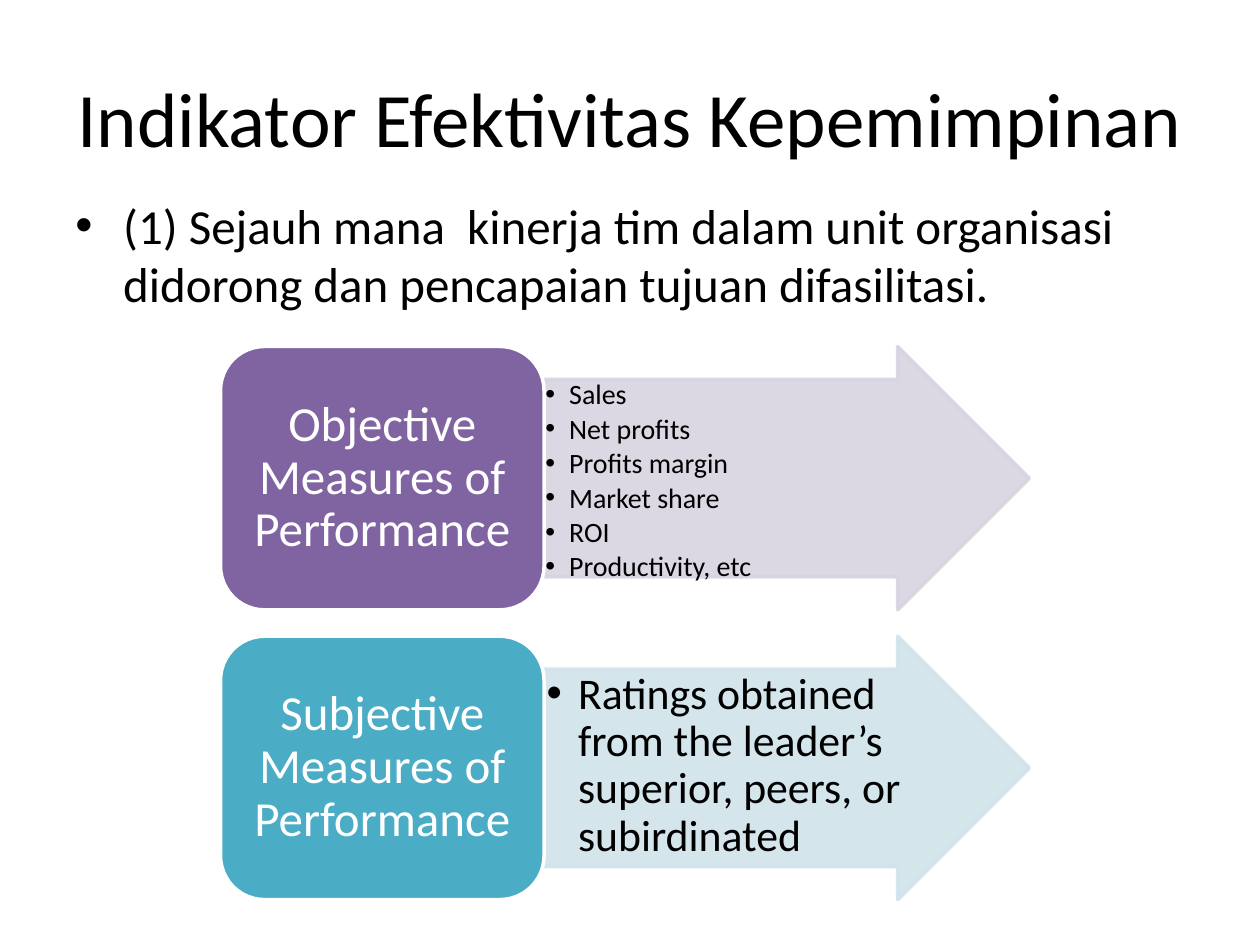
from lxml.etree import SubElement
from pptx import Presentation
from pptx.dml.color import RGBColor
from pptx.enum.shapes import MSO_SHAPE as SHAPE
from pptx.enum.text import MSO_ANCHOR as ANCHOR, PP_ALIGN as ALIGN
from pptx.oxml.ns import qn
from pptx.util import Inches, Pt

FONT = "Calibri"
BLACK, WHITE = "000000", "FFFFFF"
MEASURES = [
    ("Objective Measures of Performance", "8064A2", "D8D3E0",
     ["Sales", "Net profits", "Profits margin", "Market share", "ROI",
      "Productivity, etc"], 16, 0.19, 0.01),
    ("Subjective Measures of Performance", "4BACC6", "D0E3EA",
     ["Ratings obtained from the leader’s superior, peers, or subirdinated"],
     25, 0.25, 0.02),
]


def rgb(value):
    return RGBColor.from_string(value)


def set_alpha(sp, percent):
    """Make fill and line of a shape partly opaque."""
    for color in list(sp._element.spPr.iter(qn("a:srgbClr"))):
        SubElement(color, qn("a:alpha")).set("val", str(percent * 1000))


def add_bullet(p, indent):
    pPr = p._p.get_or_add_pPr()
    pPr.set("marL", str(Inches(indent)))
    pPr.set("indent", str(-Inches(indent)))
    SubElement(pPr, qn("a:buFont")).set("typeface", "Arial")
    SubElement(pPr, qn("a:buChar")).set("char", "•")


def write(sp, lines, size, color=BLACK, align=ALIGN.LEFT, anchor=ANCHOR.TOP,
          inset=(0.1, 0.05), indent=None, spacing=1.0, before=0, after=0):
    """Fill a shape with paragraphs; before and after are shares of the size."""
    tf = sp.text_frame
    tf.word_wrap = True
    tf.vertical_anchor = anchor
    tf.margin_left = tf.margin_right = Inches(inset[0])
    tf.margin_top = tf.margin_bottom = Inches(inset[1])
    for i, line in enumerate(lines):
        p = tf.add_paragraph() if i else tf.paragraphs[0]
        p.alignment = align
        p.line_spacing = spacing
        p.space_before = Pt(size * before)
        p.space_after = Pt(size * after)
        if indent:
            add_bullet(p, indent)
        r = p.add_run()
        r.text = line
        r.font.name = FONT
        r.font.size = Pt(size)
        r.font.color.rgb = rgb(color)


def add_box(s, kind, box, fill, line):
    sp = s.shapes.add_shape(kind, *map(Inches, box))
    sp.shadow.inherit = False
    sp.fill.solid()
    sp.fill.fore_color.rgb = rgb(fill)
    sp.line.color.rgb = rgb(line)
    sp.line.width = Pt(2)
    return sp


def add_heading(s, box, title):
    sp = s.shapes.add_textbox(*map(Inches, box))
    write(sp, [title], 44, align=ALIGN.CENTER, anchor=ANCHOR.MIDDLE)


def add_statement(s, box, text):
    sp = s.shapes.add_textbox(*map(Inches, box))
    write(sp, [text], 28, indent=0.38, before=0.2)


def add_measure(s, box, label, color, tint, items, size, indent, inset):
    """Label block over the first 40 % of the box, arrow with items after it."""
    x, y, w, h = box
    split = 0.4 * w
    arrow = add_box(s, SHAPE.RIGHT_ARROW, (x + split, y, w - split, h),
                    tint, tint)
    set_alpha(arrow, 90)
    arrow.adjustments[0], arrow.adjustments[1] = 0.75, 0.5
    write(arrow, items, size, inset=(inset, inset), indent=indent,
          spacing=0.9, after=0.15)
    block = add_box(s, SHAPE.ROUNDED_RECTANGLE, (x, y, split, h), color, WHITE)
    write(block, [label], 28, WHITE, ALIGN.CENTER, ANCHOR.MIDDLE,
          inset=(0.12, 0.06), spacing=0.9)


def add_measures(s, box, measures):
    x, y, w, h = box
    row_h = h / (1.1 * len(measures) - 0.1)  # gaps are a tenth of a row
    for i, measure in enumerate(measures):
        add_measure(s, (x, y + 1.1 * i * row_h, w, row_h), *measure)


def main():
    prs = Presentation()
    prs.slide_width, prs.slide_height = Inches(10), Inches(7.5)
    s = prs.slides.add_slide(prs.slide_layouts[6])
    add_heading(s, (0.5, 0.3, 9, 1.25), "Indikator Efektivitas Kepemimpinan")
    add_statement(s, (0.5, 1.5, 9, 5.2),
                  "(1) Sejauh mana  kinerja tim dalam unit organisasi didorong "
                  "dan pencapaian tujuan difasilitasi.")
    add_measures(s, (1.75, 2.75, 6.42, 4.39), MEASURES)
    prs.save("out.pptx")


if __name__ == "__main__":
    main()
